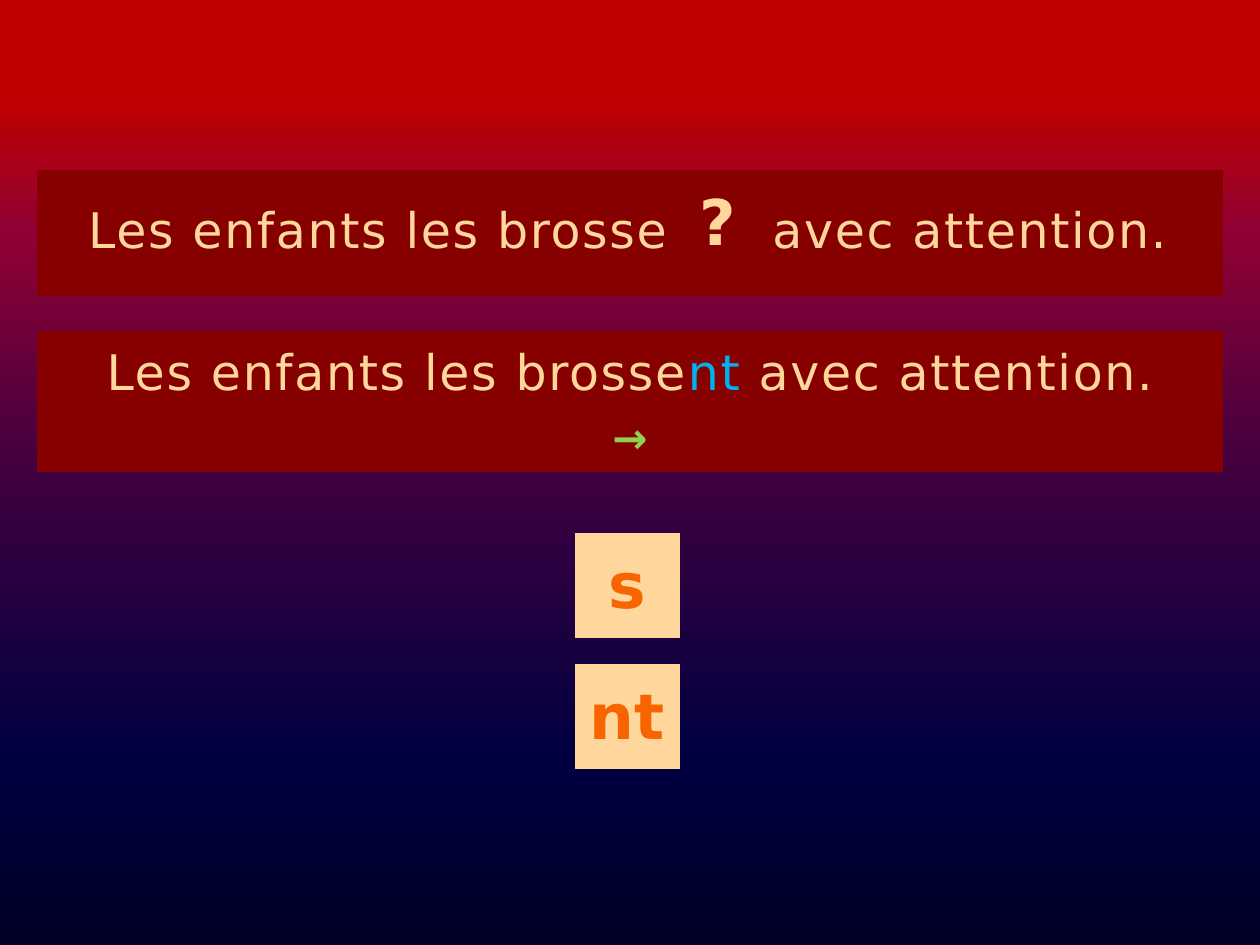
"""Build a French spelling quiz slide about a plural verb ending."""
from lxml.etree import SubElement
from pptx import Presentation
from pptx.dml.color import RGBColor
from pptx.enum.shapes import MSO_SHAPE
from pptx.enum.text import MSO_ANCHOR, PP_ALIGN
from pptx.oxml.ns import qn
from pptx.util import Pt

MAROON = RGBColor(0x86, 0x00, 0x00)
CREAM = RGBColor(0xFF, 0xD7, 0x9D)
ORANGE = RGBColor(0xF8, 0x64, 0x00)
BLUE = RGBColor(0x00, 0xB0, 0xF0)
GREEN = RGBColor(0x92, 0xD0, 0x50)
NAVY = RGBColor(0x00, 0x00, 0x26)
INK = RGBColor(0x00, 0x00, 0x40)
PLUM = RGBColor(0x40, 0x00, 0x40)
WINE = RGBColor(0x8F, 0x01, 0x34)
RED = RGBColor(0xC0, 0x00, 0x00)


def add_box(left, top, width, height, color, pads=(7.2, 2.9, 7.2, 5.8)):
    box = slide.shapes.add_shape(
        MSO_SHAPE.ACTION_BUTTON_CUSTOM, Pt(left), Pt(top), Pt(width), Pt(height))
    box.shadow.inherit = False
    box.line.fill.background()
    box.fill.solid()
    box.fill.fore_color.rgb = color
    frame = box.text_frame
    sides = ("margin_left", "margin_top", "margin_right", "margin_bottom")
    form = dict(zip(sides, map(Pt, pads)))
    form.update(word_wrap=False, vertical_anchor=MSO_ANCHOR.MIDDLE)
    for name, value in form.items():
        setattr(frame, name, value)
    frame.paragraphs[0].alignment = PP_ALIGN.CENTER
    return box


def add_run(para, text, color, size, bold=False, space=0):
    run = para.add_run()
    run.text = text
    form = {"name": "DejaVu Sans", "size": Pt(size), "bold": bold}
    for name, value in form.items():
        setattr(run.font, name, value)
    run.font.color.rgb = color
    if space:
        run.font._element.set("spc", str(space * 100))


deck = Presentation()
deck.slide_width, deck.slide_height = Pt(720), Pt(540)
slide = deck.slides.add_slide(deck.slide_layouts[6])

back = add_box(0, 0, 720, 540, NAVY)
back.fill.gradient()
back.fill.gradient_angle = 90
stops = back.fill._fill._gradFill.find(qn("a:gsLst"))
for stop in list(stops):
    stops.remove(stop)
for place, color in ((0, NAVY), (20, INK), (50, PLUM), (75, WINE), (90, RED)):
    stop = SubElement(stops, qn("a:gs"), pos=str(place * 1000))
    SubElement(stop, qn("a:srgbClr"), val=str(color))

ask = add_box(20.9, 97.2, 678.2, 72, MAROON, (29.5, 1.4, 7.2, 5.8)).text_frame
ask.word_wrap = True
para = ask.paragraphs[0]
para.alignment = PP_ALIGN.LEFT
tabs = SubElement(para._p.get_or_add_pPr(), qn("a:tabLst"))
SubElement(tabs, qn("a:tab"), pos=str(Pt(391)), algn="l")
add_run(para, "Les enfants les brosse\tavec attention.", CREAM, 28, space=1)

for text, left, top, color, ink in (
        ("?", 380, 97.2, MAROON, CREAM),
        ("s", 328.5, 304.5, CREAM, ORANGE),
        ("nt", 328.5, 379.5, CREAM, ORANGE)):
    box = add_box(left, top, 60, 60, color)
    add_run(box.text_frame.paragraphs[0], text, ink, 36, bold=True)

reply = add_box(20.9, 189.4, 678.2, 80.4, MAROON, (7.2, 2.9, 7.2, 2.9)).text_frame
para = reply.paragraphs[0]
for text, color in (("Les enfants les brosse", CREAM), ("nt", BLUE),
                    (" avec attention.", CREAM)):
    add_run(para, text, color, 28, space=1)
arrow = reply.add_paragraph()
arrow.alignment = PP_ALIGN.CENTER
add_run(arrow, "→", GREEN, 24, bold=True, space=1)
for para in reply.paragraphs:
    para.space_after = Pt(6)

deck.save("out.pptx")
